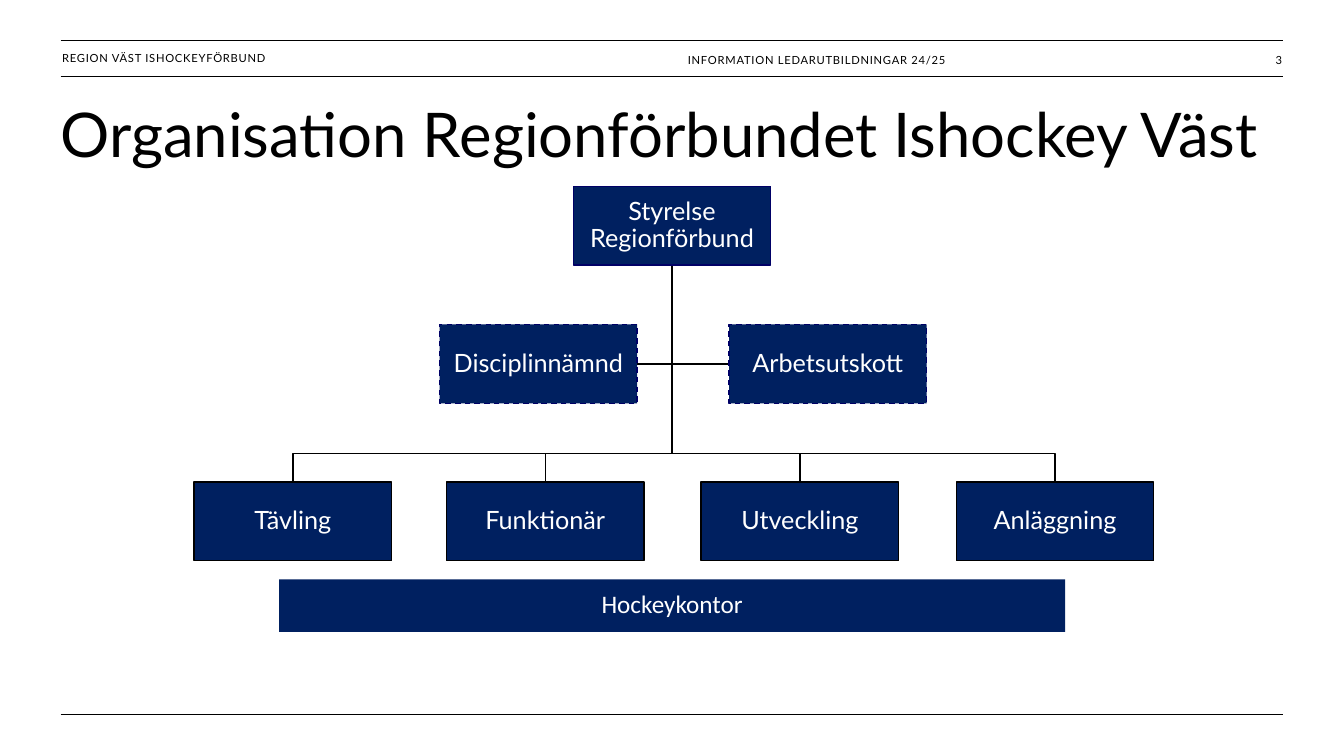
from pptx import Presentation
from pptx.dml.color import RGBColor
from pptx.enum.dml import MSO_LINE
from pptx.enum.shapes import MSO_CONNECTOR, MSO_SHAPE
from pptx.enum.text import MSO_ANCHOR, PP_ALIGN
from pptx.util import Inches, Pt
from lxml.etree import SubElement
from pptx.oxml.ns import qn

COLORS = {"ink": "000000", "navy": "002060", "edge": "000066", "white": "FFFFFF"}
BOARD = "Styrelse\vRegionförbund"
COMMITTEES = {"Disciplinnämnd": 32.71, "Arbetsutskott": 54.24}
DEPARTMENTS = {"Tävling": 14.44, "Funktionär": 33.22, "Utveckling": 52.17, "Anläggning": 71.15}
OFFICE = "Hockeykontor"
TITLE = "Organisation Regionförbundet Ishockey Väst"
HEADER = [
    ("REGION VÄST ISHOCKEYFÖRBUND", (4.63, 5.33, 25.2, 4.67), PP_ALIGN.LEFT, 0),
    ("INFORMATION LEDARUTBILDNINGAR 24/25", (51.18, 5.42, 28.66, 4.53), PP_ALIGN.LEFT, 0.04),
    ("3", (88.72, 5.42, 6.68, 4.53), PP_ALIGN.RIGHT, 0.04),
]

LEFT, RIGHT, CENTER = 4.52, 95.48, 50
RULES = [5.35, 10.13, 94.55]
BOX_WIDTH, BOX_HEIGHT = 14.7, 10.45
BOARD_TOP, COMMITTEE_TOP, BUS_TOP, DEPARTMENT_TOP = 24.63, 42.9, 60, 63.73

deck = Presentation()
deck.slide_width, deck.slide_height = Inches(13.33), Inches(7.5)
slide = deck.slides.add_slide(deck.slide_layouts[6])


def color(name):
    return RGBColor.from_string(COLORS[name])


def across(share):
    return round(deck.slide_width * share / 100)


def down(share):
    return round(deck.slide_height * share / 100)


def place(area):
    left, top, width, height = area
    return across(left), down(top), across(width), down(height)


def write(frame, words, size, ink, align, inset=0, inset_top=None, font="Lato",
          anchor=MSO_ANCHOR.MIDDLE, line_spacing=1.0, tracking=0):
    layout = {
        "word_wrap": True, "vertical_anchor": anchor,
        "margin_left": Inches(inset), "margin_right": Inches(inset),
        "margin_top": Inches(inset if inset_top is None else inset_top),
        "margin_bottom": Inches(inset),
    }
    for name, value in layout.items():
        setattr(frame, name, value)
    paragraph = frame.paragraphs[0]
    paragraph.text = words
    paragraph.alignment, paragraph.line_spacing = align, line_spacing
    for run in paragraph.runs:
        for name, value in {"name": font, "size": Pt(size)}.items():
            setattr(run.font, name, value)
        run.font.color.rgb = color(ink)
        if tracking:
            run._r.get_or_add_rPr().set("spc", str(tracking))


def add_label(words, area, **style):
    write(slide.shapes.add_textbox(*place(area)).text_frame, words, ink="ink", **style)


def add_box(words, area, edge=None, dash=None, font="Lato"):
    box = slide.shapes.add_shape(MSO_SHAPE.RECTANGLE, *place(area))
    box.shadow.inherit = False
    box.fill.solid()
    box.fill.fore_color.rgb = color("navy")
    if edge:
        box.line.color.rgb = color(edge)
        box.line.width = Pt(1)
        if dash:
            box.line.dash_style = dash
    else:
        box.line.fill.background()
    write(box.text_frame, words, 18, "white", PP_ALIGN.CENTER,
          inset=0.01, font=font, line_spacing=0.9)


def add_rule(top):
    rule = slide.shapes.add_connector(
        MSO_CONNECTOR.STRAIGHT, across(LEFT), down(top), across(RIGHT), down(top))
    rule.line.color.rgb = color("ink")
    rule.line.width = Pt(1)
    SubElement(rule._element.spPr, qn("a:effectLst"))


def add_branch(*bends):
    start, *rest = [(across(x), down(y))
                    for x, y in [(CENTER, BOARD_TOP + BOX_HEIGHT), *bends]]
    builder = slide.shapes.build_freeform(*start)
    builder.add_line_segments(rest, close=False)
    branch = builder.convert_to_shape()
    branch.shadow.inherit = False
    branch.fill.background()
    branch.line.color.rgb = color("ink")
    branch.line.width = Pt(1)


def main():
    for top in RULES:
        add_rule(top)
    for words, area, align, inset_top in HEADER:
        add_label(words, area, size=8, align=align, inset_top=inset_top, tracking=50)
    add_label(TITLE, (LEFT, 13.8, RIGHT - LEFT, 16.8), size=44,
              align=PP_ALIGN.LEFT, anchor=MSO_ANCHOR.TOP, line_spacing=0.9)

    committee_middle = COMMITTEE_TOP + BOX_HEIGHT / 2
    discipline_left, working_left = COMMITTEES.values()
    for side in (working_left, discipline_left + BOX_WIDTH):
        add_branch((CENTER, committee_middle), (side, committee_middle))
    for left in DEPARTMENTS.values():
        middle = left + BOX_WIDTH / 2
        add_branch((CENTER, BUS_TOP), (middle, BUS_TOP), (middle, DEPARTMENT_TOP))

    add_box(BOARD, (CENTER - BOX_WIDTH / 2, BOARD_TOP, BOX_WIDTH, BOX_HEIGHT), "edge")
    for words, left in DEPARTMENTS.items():
        add_box(words, (left, DEPARTMENT_TOP, BOX_WIDTH, BOX_HEIGHT), "ink")
    for words, left in COMMITTEES.items():
        add_box(words, (left, COMMITTEE_TOP, BOX_WIDTH, BOX_HEIGHT), "edge", MSO_LINE.DASH)
    add_box(OFFICE, (20.76, 76.65, 58.5, 6.93), font="Calibri")
    deck.save("out.pptx")


if __name__ == "__main__":
    main()
